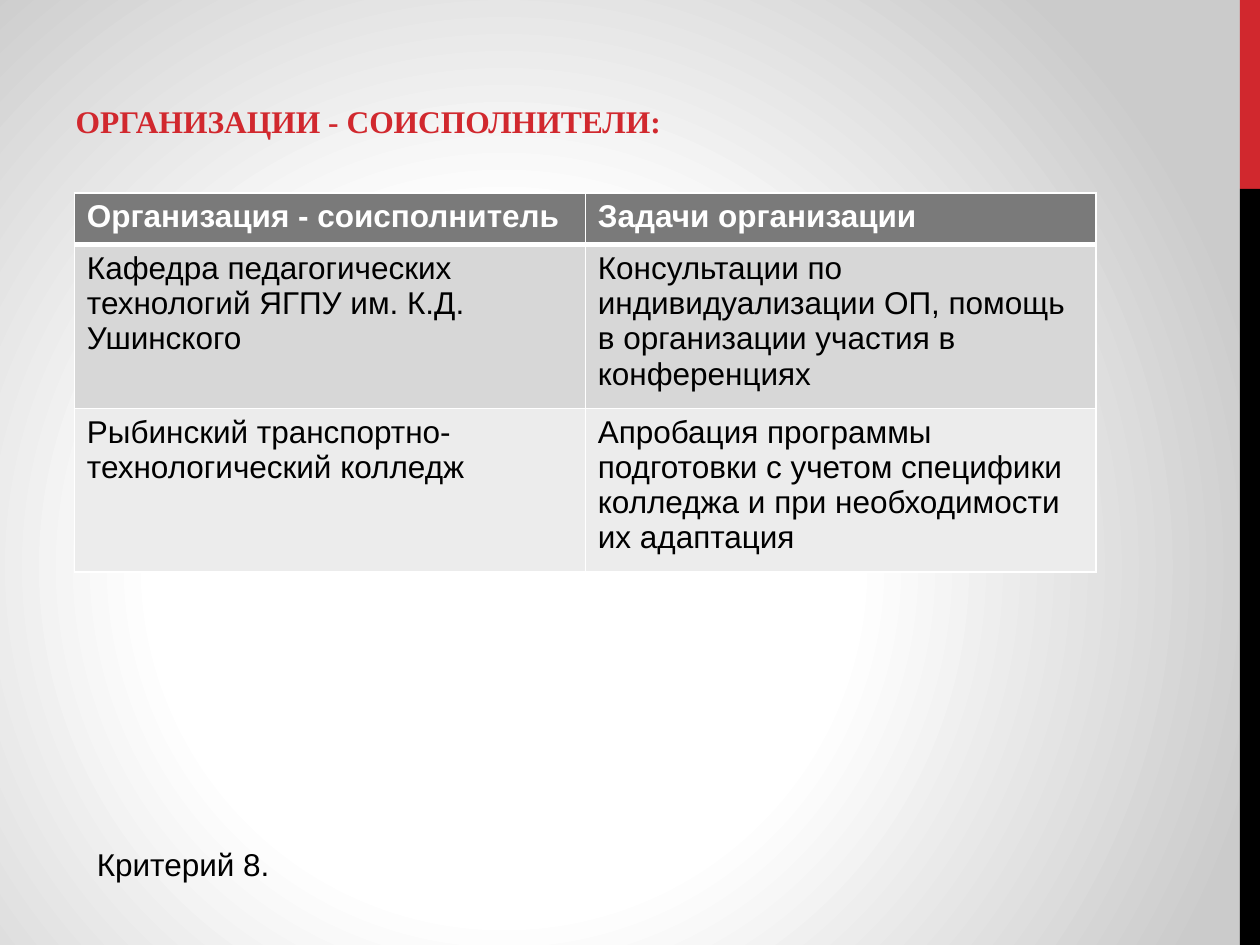
from dataclasses import dataclass

from pptx import Presentation
from pptx.dml.color import RGBColor
from pptx.enum.shapes import MSO_SHAPE
from pptx.enum.text import MSO_ANCHOR, MSO_AUTO_SIZE, PP_ALIGN
from pptx.oxml import parse_xml
from pptx.oxml.ns import nsdecls, qn
from pptx.util import Inches, Pt

RED = RGBColor(0xD1, 0x28, 0x2E)
BLACK = RGBColor(0, 0, 0)
WHITE = RGBColor(0xFF, 0xFF, 0xFF)
SILVER = RGBColor(0xCB, 0xCB, 0xCB)
GRAY = RGBColor(0x7A, 0x7A, 0x7A)
MIST = RGBColor(0xD7, 0xD7, 0xD7)
PALE = RGBColor(0xEC, 0xEC, 0xEC)


@dataclass
class Bar:
    top: float
    height: float
    color: RGBColor


@dataclass
class Row:
    height: float
    fill: RGBColor
    ink: RGBColor
    bold: bool
    above: int
    below: int
    words: tuple[str, str]


BARS = [Bar(0, 1.5, RED), Bar(1.5, 6, BLACK)]
ROWS = [
    Row(0.41, GRAY, WHITE, True, 1, 3,
        ("Организация - соисполнитель", "Задачи организации")),
    Row(1.3, MIST, BLACK, False, 3, 1,
        ("Кафедра педагогических технологий ЯГПУ им. К.Д. Ушинского",
         "Консультации по индивидуализации ОП, помощь в организации участия в конференциях")),
    Row(1.3, PALE, BLACK, False, 1, 1,
        ("Рыбинский транспортно-технологический колледж",
         "Апробация программы подготовки с учетом специфики колледжа и при необходимости их адаптация")),
]
STOPS = [(0, WHITE), (44, WHITE), (100, SILVER)]


def apply(target, values: dict) -> None:
    for name, value in values.items():
        setattr(target, name, value)


def write(frame, words: str, ink: RGBColor, bold: bool = False,
          face: str = "Arial") -> None:
    line = frame.paragraphs[0]
    line.alignment = PP_ALIGN.LEFT
    run = line.add_run()
    run.text = words
    apply(run.font, {"size": Pt(18), "name": face, "bold": bold})
    run.font.color.rgb = ink


def paint(slide) -> None:
    slide.background.fill.gradient()
    old = slide.element.find(".//" + qn("a:gradFill"))
    stops = "".join(
        f'<a:gs pos="{spot * 1000}"><a:srgbClr val="{color}"/></a:gs>'
        for spot, color in STOPS)
    new = parse_xml(
        f'<a:gradFill {nsdecls("a")} rotWithShape="1"><a:gsLst>{stops}</a:gsLst>'
        '<a:path path="circle"><a:fillToRect l="40000" t="60000" r="60000" b="40000"/>'
        '</a:path></a:gradFill>')
    old.getparent().replace(old, new)


def add_bar(slide, bar: Bar) -> None:
    shape = slide.shapes.add_shape(
        MSO_SHAPE.RECTANGLE, Inches(9.84), Inches(bar.top),
        Inches(0.16), Inches(bar.height))
    shape.shadow.inherit = False
    shape.fill.solid()
    shape.fill.fore_color.rgb = bar.color
    shape.line.fill.background()


def add_title(slide) -> None:
    title = slide.shapes.title
    apply(title, {"left": Inches(0.5), "top": Inches(0.76),
                  "width": Inches(8.33), "height": Inches(5.94)})
    frame = title.text_frame
    apply(frame, {"vertical_anchor": MSO_ANCHOR.TOP, "word_wrap": True,
                  "auto_size": MSO_AUTO_SIZE.NONE})
    write(frame, "ОРГАНИЗАЦИИ - СОИСПОЛНИТЕЛИ:", RED, True, "Times New Roman")
    apply(frame.paragraphs[0], {"space_before": Pt(3.6), "space_after": Pt(6)})


def add_note(slide) -> None:
    box = slide.shapes.add_textbox(
        Inches(0.67), Inches(6.66), Inches(1.58), Inches(0.4))
    apply(box.text_frame, {"word_wrap": False,
                           "auto_size": MSO_AUTO_SIZE.SHAPE_TO_FIT_TEXT})
    write(box.text_frame, "Критерий 8.", BLACK)


def edge(cell, row: Row) -> None:
    sides = {"L": 1, "R": 1, "T": row.above, "B": row.below}
    for place, (side, width) in enumerate(sides.items()):
        cell._tc.get_or_add_tcPr().insert(place, parse_xml(
            f'<a:ln{side} {nsdecls("a")} w="{Pt(width)}"><a:solidFill>'
            f'<a:srgbClr val="{WHITE}"/></a:solidFill></a:ln{side}>'))


def add_grid(slide) -> None:
    grid = slide.shapes.add_table(
        len(ROWS), 2, Inches(0.59), Inches(1.53),
        Inches(8.11), Inches(sum(row.height for row in ROWS))).table
    for line, row in zip(grid.rows, ROWS):
        line.height = Inches(row.height)
        for cell, words in zip(line.cells, row.words):
            cell.fill.solid()
            cell.fill.fore_color.rgb = row.fill
            edge(cell, row)
            write(cell.text_frame, words, row.ink, row.bold)


def main() -> None:
    deck = Presentation()
    apply(deck, {"slide_width": Inches(10), "slide_height": Inches(7.5)})
    slide = deck.slides.add_slide(deck.slide_layouts[5])
    paint(slide)
    for bar in BARS:
        add_bar(slide, bar)
    add_title(slide)
    add_note(slide)
    add_grid(slide)
    deck.save("out.pptx")


if __name__ == "__main__":
    main()
